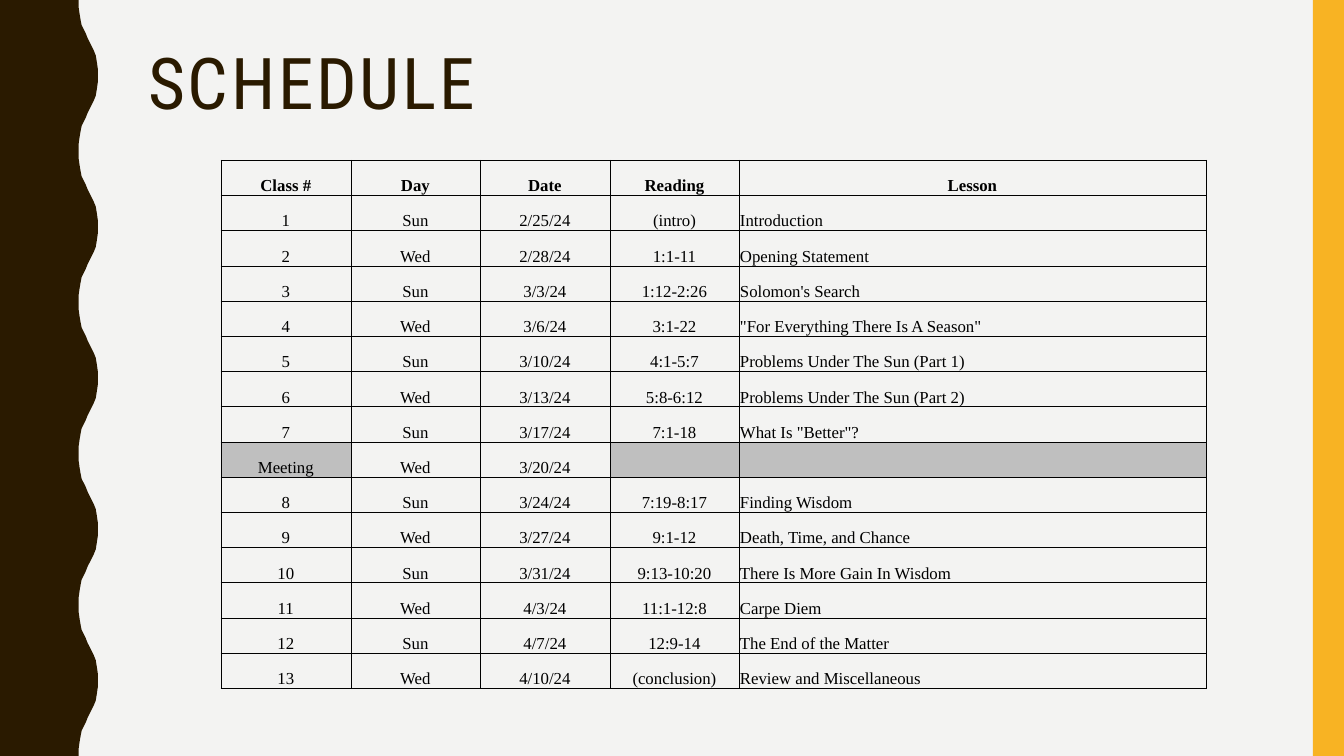
"""Build the class schedule slide with its wavy left border and lesson table."""
from dataclasses import dataclass

from lxml.etree import SubElement
from pptx import Presentation
from pptx.dml.color import RGBColor as RGB
from pptx.enum.shapes import MSO_SHAPE as SHAPE
from pptx.enum.text import MSO_ANCHOR as ANCHOR, MSO_AUTO_SIZE as AUTOSIZE, PP_ALIGN as ALIGN
from pptx.oxml.ns import qn
from pptx.util import Pt

TITLE = "SCHEDULE"
ROWS = [
    ("Class #", "Day", "Date", "Reading", "Lesson"),
    ("1", "Sun", "2/25/24", "(intro)", "Introduction"),
    ("2", "Wed", "2/28/24", "1:1-11", "Opening Statement"),
    ("3", "Sun", "3/3/24", "1:12-2:26", "Solomon's Search"),
    ("4", "Wed", "3/6/24", "3:1-22", '"For Everything There Is A Season"'),
    ("5", "Sun", "3/10/24", "4:1-5:7", "Problems Under The Sun (Part 1)"),
    ("6", "Wed", "3/13/24", "5:8-6:12", "Problems Under The Sun (Part 2)"),
    ("7", "Sun", "3/17/24", "7:1-18", 'What Is "Better"?'),
    ("Meeting", "Wed", "3/20/24", "", ""),
    ("8", "Sun", "3/24/24", "7:19-8:17", "Finding Wisdom"),
    ("9", "Wed", "3/27/24", "9:1-12", "Death, Time, and Chance"),
    ("10", "Sun", "3/31/24", "9:13-10:20", "There Is More Gain In Wisdom"),
    ("11", "Wed", "4/3/24", "11:1-12:8", "Carpe Diem"),
    ("12", "Sun", "4/7/24", "12:9-14", "The End of the Matter"),
    ("13", "Wed", "4/10/24", "(conclusion)", "Review and Miscellaneous"),
]
COLUMNS = (129, 128, 129, 128, 463)
LESSON = 4
SHADED = {(8, 0), (8, 3), (8, 4)}

SLIDE_W, SLIDE_H = 1333, 750
TITLE_BOX = (137, 42, 1113, 163)
TABLE_BOX = (219, 159, sum(COLUMNS), 524)
GOLD_BAR = (1302, 0, 31, SLIDE_H)
WAVE_PERIOD = 150
HALF_WAVE = [
    (78, 0), (78, 7), (79, 14), (80, 20), (81, 25), (83, 29), (85, 33), (87, 38),
    (89, 42), (91, 46), (93, 50), (95, 55), (96, 61), (97, 68), (97, 75),
]
EMU_PER_PX = 9144


@dataclass(frozen=True)
class Theme:
    paper: RGB = RGB(0xF3, 0xF3, 0xF2)
    brown: RGB = RGB(0x2A, 0x1A, 0x00)
    gold: RGB = RGB(0xF8, 0xB3, 0x23)
    black: RGB = RGB(0, 0, 0)
    gray: RGB = RGB(0xBF, 0xBF, 0xBF)
    title_font: str = "Roboto Condensed"
    table_font: str = "Times New Roman"
    title_size: int = 51
    table_size: int = 12
    border: float = 0.5


THEME = Theme()


def px(*lengths):
    return [n * EMU_PER_PX for n in lengths]


def paint(sp, color):
    sp.shadow.inherit = False
    sp.fill.solid()
    sp.fill.fore_color.rgb = color
    sp.line.fill.background()


def style_run(r, font, size, color, bold=False):
    r.font.name, r.font.size, r.font.bold = font, Pt(size), bold
    r.font.color.rgb = color


def add_wave(s):
    period = HALF_WAVE + [(x, WAVE_PERIOD - y) for x, y in HALF_WAVE[-2:0:-1]]
    edge = [(x, top + y) for top in range(0, SLIDE_H, WAVE_PERIOD) for x, y in period]
    builder = s.shapes.build_freeform(0, 0, scale=EMU_PER_PX)
    builder.add_line_segments(edge + [(HALF_WAVE[0][0], SLIDE_H), (0, SLIDE_H)], close=True)
    paint(builder.convert_to_shape(), THEME.brown)


def add_title(s):
    sp = s.shapes.title
    sp.left, sp.top, sp.width, sp.height = px(*TITLE_BOX)
    tf = sp.text_frame
    tf.text = TITLE
    tf.auto_size, tf.vertical_anchor = AUTOSIZE.NONE, ANCHOR.TOP
    p = tf.paragraphs[0]
    p.alignment, p.line_spacing = ALIGN.LEFT, 0.9
    r = p.runs[0]
    style_run(r, THEME.title_font, THEME.title_size, THEME.brown)
    r.font._element.set("spc", "200")


def add_borders(cell):
    tc_pr = cell._tc.get_or_add_tcPr()
    for side in ("a:lnL", "a:lnR", "a:lnT", "a:lnB"):
        ln = SubElement(tc_pr, qn(side), w=str(Pt(THEME.border)))
        fill = SubElement(ln, qn("a:solidFill"))
        SubElement(fill, qn("a:srgbClr"), val=str(THEME.black))


def fill_cell(cell, text, row, col):
    cell.margin_left = cell.margin_right = cell.margin_top = EMU_PER_PX
    cell.margin_bottom = 0
    cell.vertical_anchor = ANCHOR.BOTTOM
    add_borders(cell)
    if (row, col) in SHADED:
        cell.fill.solid()
        cell.fill.fore_color.rgb = THEME.gray
    else:
        cell.fill.background()
    if text:
        p = cell.text_frame.paragraphs[0]
        p.text = text
        p.alignment = ALIGN.LEFT if row and col == LESSON else ALIGN.CENTER
        style_run(p.runs[0], THEME.table_font, THEME.table_size, THEME.black, row == 0)


def add_schedule(s):
    box = px(*TABLE_BOX)
    table = s.shapes.add_table(len(ROWS), len(COLUMNS), *box).table
    table.first_row = table.horz_banding = False
    for column, width in zip(table.columns, px(*COLUMNS)):
        column.width = width
    for i, row in enumerate(ROWS):
        table.rows[i].height = box[3] // len(ROWS)
        for j, text in enumerate(row):
            fill_cell(table.cell(i, j), text, i, j)


def main():
    prs = Presentation()
    prs.slide_width, prs.slide_height = px(SLIDE_W, SLIDE_H)
    s = prs.slides.add_slide(prs.slide_layouts[5])
    s.background.fill.solid()
    s.background.fill.fore_color.rgb = THEME.paper
    add_wave(s)
    paint(s.shapes.add_shape(SHAPE.RECTANGLE, *px(*GOLD_BAR)), THEME.gold)
    add_title(s)
    add_schedule(s)
    prs.save("out.pptx")


if __name__ == "__main__":
    main()
